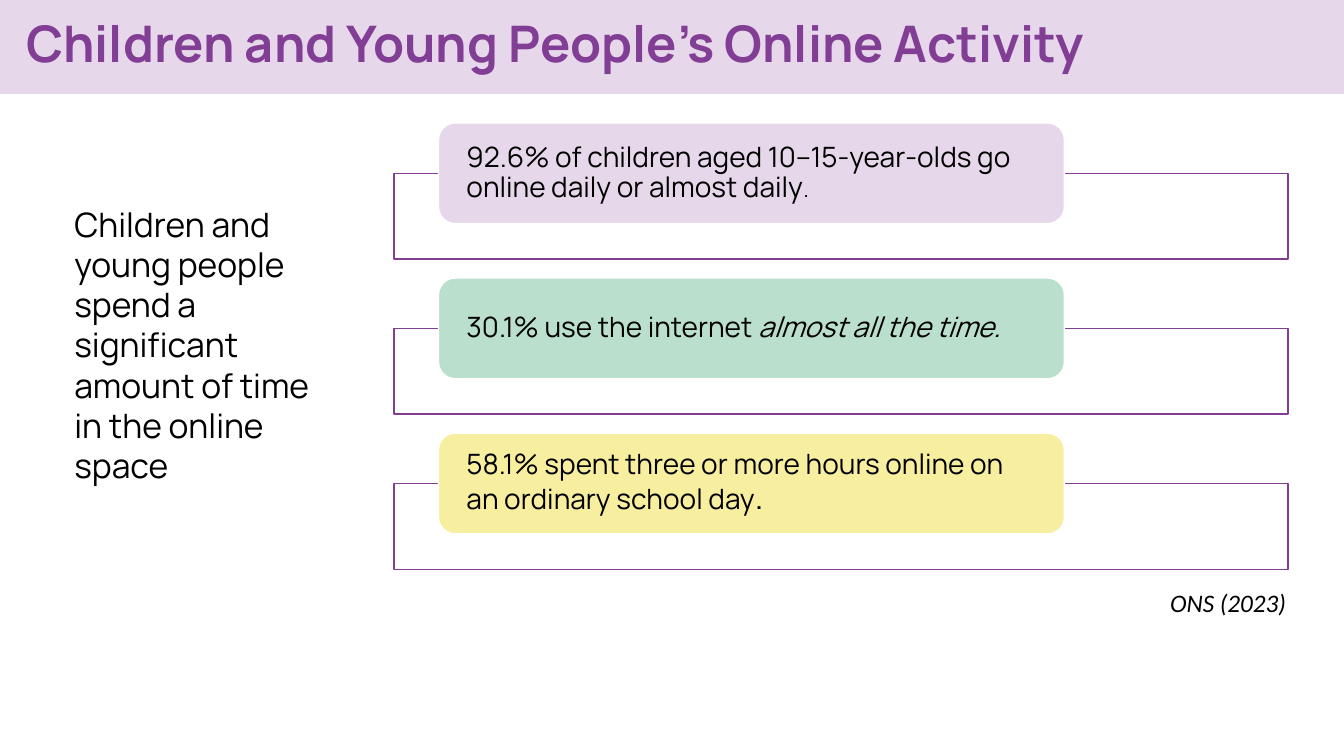
"""Build a slide on how much time children and young people spend online."""
from lxml import etree
from pptx import Presentation
from pptx.dml.color import RGBColor
from pptx.enum.shapes import MSO_SHAPE
from pptx.enum.text import MSO_ANCHOR, MSO_AUTO_SIZE, PP_ALIGN
from pptx.oxml.ns import qn
from pptx.util import Pt

RECTANGLE, ROUNDED = MSO_SHAPE.RECTANGLE, MSO_SHAPE.ROUNDED_RECTANGLE
MIDDLE, LEFT, NO_FIT = MSO_ANCHOR.MIDDLE, PP_ALIGN.LEFT, MSO_AUTO_SIZE.NONE

PURPLE, LILAC, WHITE, BLACK = "823D94", "E6D8EA", "FFFFFF", "000000"
TITLE = "Children and Young People’s Online Activity"
INTRO = "Children and young people spend a significant amount of time in the online space"
SOURCE = "ONS (2023)"
FACTS = [
    (LILAC, [("92.6% of children aged 10–15-year-olds go online daily or almost daily", 20, False),
             (".", 16, False)]),
    ("BADFCD", [("30.1% use the internet ", 20, False), ("almost all the time.", 20, True)]),
    ("F7EEA0", [("58.1% spent three or more hours online on an ordinary school day", 20, False),
                (".", 24, False)]),
]
SLIDE_WIDTH, SLIDE_HEIGHT = 960, 540
FRAME_LEFT, FRAME_TOP, FRAME_WIDTH, FRAME_HEIGHT = 281.5, 123.8, 638.6, 61.2
PILL_LEFT, PILL_TOP, PILL_WIDTH, PILL_HEIGHT = 313.2, 87.8, 447.1, 72
ROW_PITCH = 110.8


def color(value):
    return RGBColor.from_string(value)


def add_box(slide, kind, box, fill, line):
    shape = slide.shapes.add_shape(kind, *map(Pt, box))
    shape.shadow.inherit = False
    shape.fill.solid()
    shape.fill.fore_color.rgb = color(fill)
    shape.line.color.rgb = color(line)
    shape.line.width = Pt(1)
    return shape


def set_font(font, name, size, value, bold=False, italic=False):
    font.name, font.size = name, Pt(size)
    font.bold, font.italic = bold, italic
    font.color.rgb = color(value)


def add_text(slide, box, text, name, size, italic=False):
    frame = slide.shapes.add_textbox(*map(Pt, box)).text_frame
    frame.word_wrap = True
    frame.text = text
    set_font(frame.paragraphs[0].font, name, size, BLACK, italic=italic)


def add_title(slide):
    band = add_box(slide, RECTANGLE, (0, 0, SLIDE_WIDTH, 67), LILAC, LILAC)
    title = slide.shapes.title
    title._element.addprevious(band._element)
    title.left, title.top, title.width, title.height = map(Pt, (11.5, 5, 908.6, 51.1))
    frame = title.text_frame
    frame.text = TITLE
    frame.auto_size = NO_FIT
    frame.vertical_anchor = MIDDLE
    frame.paragraphs[0].alignment = LEFT
    set_font(frame.paragraphs[0].font, "Manrope", 36, PURPLE, bold=True)


def add_fact(slide, row, fill, runs):
    offset = row * ROW_PITCH
    outline = add_box(slide, RECTANGLE,
                      (FRAME_LEFT, FRAME_TOP + offset, FRAME_WIDTH, FRAME_HEIGHT), WHITE, PURPLE)
    fill_color = outline._element.spPr.find(qn("a:solidFill"))[0]
    etree.SubElement(fill_color, qn("a:alpha"), val="90000")
    pill = add_box(slide, ROUNDED,
                   (PILL_LEFT, PILL_TOP + offset, PILL_WIDTH, PILL_HEIGHT), fill, WHITE)
    frame = pill.text_frame
    frame.word_wrap = True
    frame.vertical_anchor = MIDDLE
    frame.margin_left = frame.margin_right = Pt(16.5)
    frame.margin_top = frame.margin_bottom = 0
    paragraph = frame.paragraphs[0]
    paragraph.alignment = LEFT
    paragraph.line_spacing = 0.9
    for text, size, italic in runs:
        run = paragraph.add_run()
        run.text = text
        set_font(run.font, "Manrope", size, BLACK, italic=italic)


def main():
    presentation = Presentation()
    presentation.slide_width, presentation.slide_height = Pt(SLIDE_WIDTH), Pt(SLIDE_HEIGHT)
    slide = presentation.slides.add_slide(presentation.slide_layouts[5])
    add_title(slide)
    for row, (fill, runs) in enumerate(FACTS):
        add_fact(slide, row, fill, runs)
    add_text(slide, (46, 141.8, 193, 211), INTRO, "Manrope", 24)
    add_text(slide, (828.7, 416.2, 105.8, 28.8), SOURCE, "Calibri", 18, italic=True)
    presentation.save("out.pptx")


if __name__ == "__main__":
    main()
